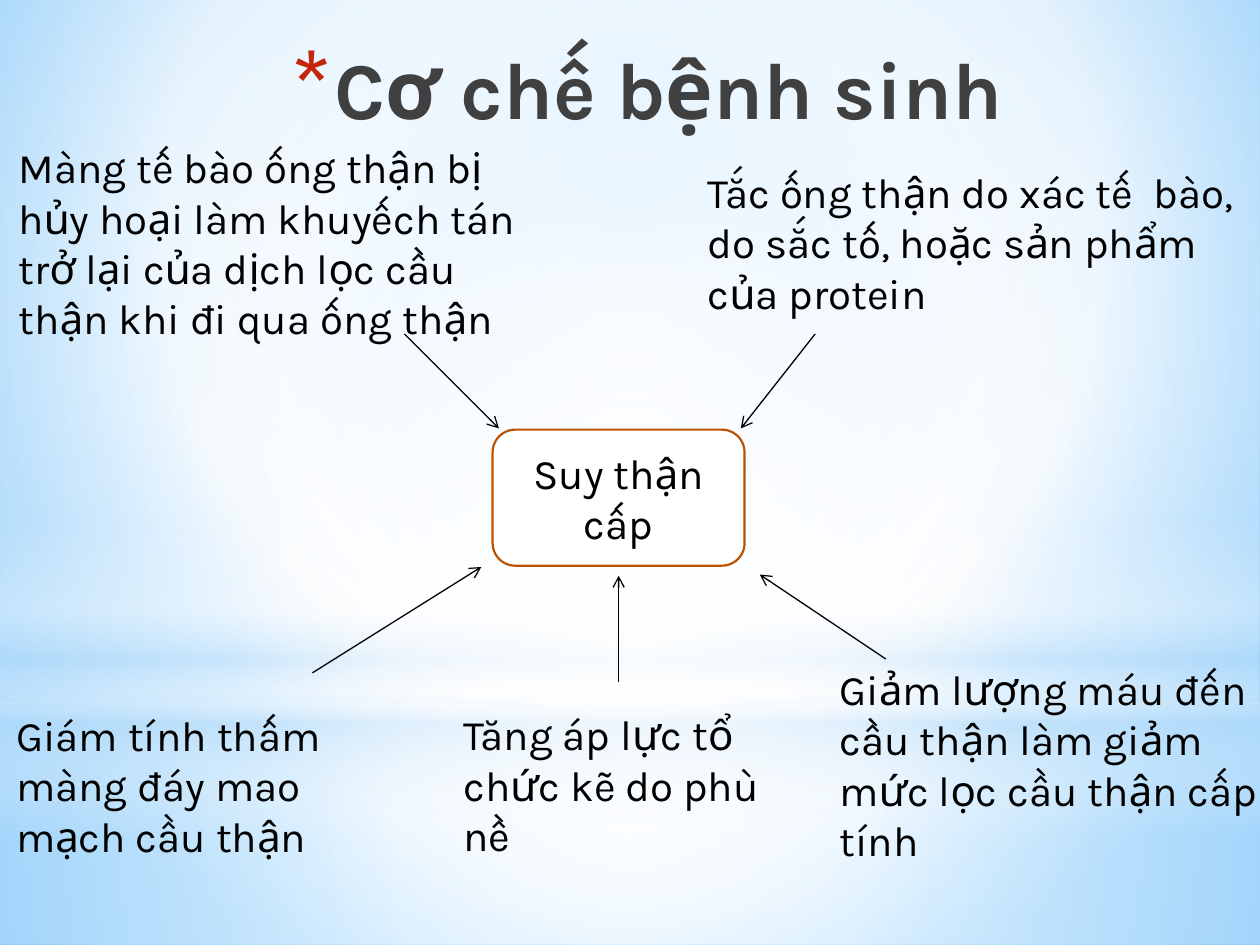
import lxml.etree
import pptx
import pptx.dml.color
import pptx.enum.shapes
import pptx.enum.text
import pptx.oxml
import pptx.oxml.ns
import pptx.util

Inches = pptx.util.Inches
Pt = pptx.util.Pt
RGBColor = pptx.dml.color.RGBColor
SHAPE = pptx.enum.shapes.MSO_SHAPE
ALIGN = pptx.enum.text.PP_ALIGN
qn = pptx.oxml.ns.qn

FONT = "Karla"
BLACK = RGBColor(0x00, 0x00, 0x00)
WHITE = RGBColor(0xFF, 0xFF, 0xFF)
TITLE_GREY = RGBColor(0x40, 0x40, 0x40)
BULLET_RED = RGBColor(0xC3, 0x26, 0x0C)
BOX_ORANGE = RGBColor(0xBB, 0x52, 0x03)
SKY = RGBColor(0x9E, 0xD5, 0xFF)
DEEP_SKY = RGBColor(0x5B, 0xB9, 0xFF)
MIST = RGBColor(0xB4, 0xDC, 0xFA)

CENTRE = (50, 50, 50, 50)

# Gradient stops: position %, colour, opacity %
BACKGROUND_STOPS = [(0, SKY, 100), (60, WHITE, 100), (100, DEEP_SKY, 100)]
GLOWS = [
    (SHAPE.RECTANGLE, (0, 5.58, 10, 1.92),
     [(0, WHITE, 91), (37, WHITE, 76), (100, MIST, 79)], CENTRE),
    (SHAPE.RECTANGLE, (0, 0, 10, 5.58),
     [(0, WHITE, 89), (48, WHITE, 62), (100, MIST, 79)], CENTRE),
    (SHAPE.RECTANGLE, (0, 4.12, 10, 2.5),
     [(0, WHITE, 0), (29, WHITE, 30), (45, MIST, 40), (55, WHITE, 26),
      (65, MIST, 60), (100, WHITE, 0)], None),
    (SHAPE.OVAL, (0, 1.75, 10, 5.58),
     [(0, WHITE, 100), (56, WHITE, 0)], CENTRE),
]

CAUSES = [
    ((0.03, 5.4, 2.75, 1.66), ["Giám tính thấm màng đáy mao mạch cầu thận"]),
    ((0.05, 1.06, 4.4, 1.73),
     ["Màng tế bào ống thận bị", "hủy hoại làm khuyếch tán",
      "trở lại của dịch lọc cầu thận khi đi qua ống thận"]),
    ((5.52, 1.19, 4.5, 1.46),
     ["Tắc ống thận do xác tế  bào, do sắc tố, hoặc sản phẩm của protein"]),
    ((3.58, 5.56, 2.66, 1.33), ["Tăng áp lực tổ chức kẽ do phù nề"]),
]
BLOOD_FLOW = "Giảm lượng máu đến cầu thận làm giảm mức lọc cầu thận cấp tính"

ARROWS = [
    (3.21, 2.65, 3.96, 3.4),
    (6.47, 2.65, 5.88, 3.4),
    (7.03, 5.23, 6.03, 4.56),
    (2.48, 5.34, 3.82, 4.5),
    (4.91, 5.41, 4.91, 4.57),
]


def add_child(parent, tag, **attributes):
    child = lxml.etree.SubElement(parent, qn(tag))
    for name, value in attributes.items():
        child.set(name, str(value))
    return child


def set_gradient(fill_parent, stops, focus):
    """Swap a solid fill for a radial gradient, or a vertical one without focus."""
    solid = fill_parent.find(qn("a:solidFill"))
    gradient = pptx.oxml.parse_xml(
        f'<a:gradFill {pptx.oxml.ns.nsdecls("a")} rotWithShape="1"/>')
    stop_list = add_child(gradient, "a:gsLst")
    for position, colour, opacity in stops:
        stop = add_child(stop_list, "a:gs", pos=position * 1000)
        tint = add_child(stop, "a:srgbClr", val=colour)
        if opacity < 100:
            add_child(tint, "a:alpha", val=opacity * 1000)
    if focus:
        radial = add_child(gradient, "a:path", path="circle")
        sides = {side: share * 1000 for side, share in zip("ltrb", focus)}
        add_child(radial, "a:fillToRect", **sides)
    else:
        add_child(gradient, "a:lin", ang=90 * 60000, scaled=0)
    fill_parent.replace(solid, gradient)


def write_text(holder, paragraphs, size=24, bold=False, colour=BLACK,
               align=ALIGN.LEFT):
    frame = holder.text_frame
    frame.word_wrap = True
    frame.auto_size = pptx.enum.text.MSO_AUTO_SIZE.NONE
    frame.vertical_anchor = pptx.enum.text.MSO_ANCHOR.MIDDLE
    frame.text = "\n".join(paragraphs)
    for paragraph in frame.paragraphs:
        paragraph.alignment = align
        font = paragraph.runs[0].font
        font.name, font.size, font.bold = FONT, Pt(size), bold
        font.color.rgb = colour


def add_box(slide, kind, place, fill=None, line=None):
    box = slide.shapes.add_shape(kind, *map(Inches, place))
    box.shadow.inherit = False
    if fill is None:
        box.fill.background()
    else:
        box.fill.solid()
        box.fill.fore_color.rgb = fill
    if line is None:
        box.line.fill.background()
    else:
        box.line.color.rgb = line
        box.line.width = Pt(1.25)
    return box


def add_backdrop(slide):
    slide.background.fill.solid()
    background = slide.element.cSld.find(qn("p:bg")).find(qn("p:bgPr"))
    set_gradient(background, BACKGROUND_STOPS, (20, 10, 20, 60))
    for kind, place, stops, focus in GLOWS:
        glow = add_box(slide, kind, place, fill=WHITE)
        set_gradient(glow.element.spPr, stops, focus)


def add_title(slide, text):
    title = slide.shapes.title
    slide.shapes.element.append(title.element)  # in front of the backdrop
    title.left, title.top, title.width, title.height = map(
        Inches, (-0.42, 0.19, 8.48, 1))
    write_text(title, [text], size=46, bold=True, colour=TITLE_GREY,
               align=ALIGN.RIGHT)
    # Red asterisk bullet with a hanging indent
    properties = title.text_frame.paragraphs[0]._p.get_or_add_pPr()
    properties.set("marL", str(Inches(0.35)))
    properties.set("indent", str(Inches(-0.35)))
    add_child(add_child(properties, "a:buClr"), "a:srgbClr", val=BULLET_RED)
    add_child(properties, "a:buSzPct", val=128000)
    add_child(properties, "a:buFont", typeface=FONT)
    add_child(properties, "a:buChar", char="*")


def add_arrow(slide, ends):
    arrow = slide.shapes.add_connector(
        pptx.enum.shapes.MSO_CONNECTOR.STRAIGHT, *map(Inches, ends))
    arrow.line.color.rgb = BLACK
    arrow.line.width = Pt(0.75)
    add_child(arrow.line._get_or_add_ln(), "a:tailEnd", type="arrow")
    add_child(arrow.element.spPr, "a:effectLst")


def main():
    deck = pptx.Presentation()
    deck.slide_width, deck.slide_height = Inches(10), Inches(7.5)
    slide = deck.slides.add_slide(deck.slide_layouts[5])

    add_backdrop(slide)
    add_title(slide, "Cơ chế bệnh sinh")

    # Condition in the middle
    condition = add_box(slide, SHAPE.ROUNDED_RECTANGLE, (3.91, 3.41, 2, 1.08),
                        fill=WHITE, line=BOX_ORANGE)
    write_text(condition, ["Suy thận cấp"], align=ALIGN.CENTER)

    # Causes around it
    blood_flow = add_box(slide, SHAPE.ROUNDED_RECTANGLE, (6.5, 5.4, 3.71, 1.33))
    write_text(blood_flow, [BLOOD_FLOW])
    for place, paragraphs in CAUSES:
        cause = slide.shapes.add_textbox(*map(Inches, place))
        write_text(cause, paragraphs)

    for ends in ARROWS:
        add_arrow(slide, ends)

    deck.save("out.pptx")


if __name__ == "__main__":
    main()
